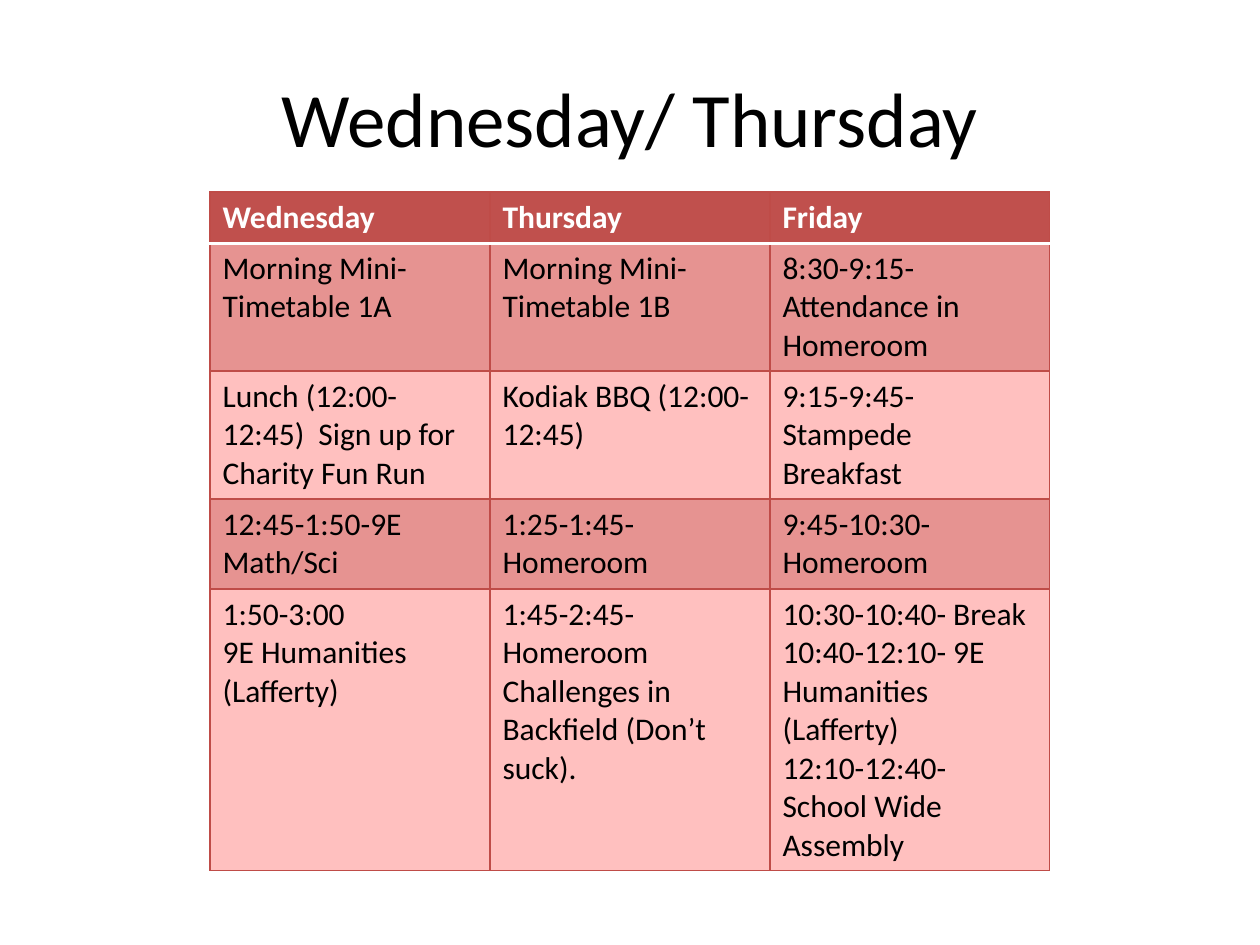
from dataclasses import dataclass

from lxml.etree import SubElement
from pptx import Presentation
from pptx.dml.color import RGBColor
from pptx.enum.text import MSO_ANCHOR as Anchor, PP_ALIGN as Align
from pptx.oxml.ns import qn
from pptx.util import Emu, Pt

EMU_PER_PX = 914400 / 126
FONT = "Calibri"
BLACK = RGBColor(0x00, 0x00, 0x00)
WHITE = RGBColor(0xFF, 0xFF, 0xFF)
HEADER_RED = RGBColor(0xC0, 0x50, 0x4D)
BORDER_RED = RGBColor(0xBF, 0x4C, 0x48)
DARK_PINK = RGBColor(0xE6, 0x93, 0x91)
LIGHT_PINK = RGBColor(0xFF, 0xC0, 0xBF)


@dataclass(frozen=True)
class Border:
    color: RGBColor
    width: float


@dataclass(frozen=True)
class RowStyle:
    fill: RGBColor
    color: RGBColor
    bold: bool
    top: Border
    bottom: Border


@dataclass(frozen=True)
class ScheduleRow:
    height: int
    style: RowStyle
    texts: tuple[str, ...]


THIN = Border(BORDER_RED, 0.75)
HEADER_RULE = Border(WHITE, 2)
HEADER = RowStyle(HEADER_RED, WHITE, True, THIN, HEADER_RULE)
FIRST = RowStyle(DARK_PINK, BLACK, False, HEADER_RULE, THIN)
DARK = RowStyle(DARK_PINK, BLACK, False, THIN, THIN)
LIGHT = RowStyle(LIGHT_PINK, BLACK, False, THIN, THIN)

SCHEDULE = (
    ScheduleRow(51, HEADER, ("Wednesday", "Thursday", "Friday")),
    ScheduleRow(128, FIRST, (
        "Morning Mini-Timetable 1A",
        "Morning Mini-Timetable 1B",
        "8:30-9:15- Attendance in Homeroom",
    )),
    ScheduleRow(128, LIGHT, (
        "Lunch (12:00-12:45)  Sign up for Charity Fun Run",
        "Kodiak BBQ (12:00-12:45)",
        "9:15-9:45- Stampede Breakfast",
    )),
    ScheduleRow(90, DARK, (
        "12:45-1:50-9E Math/Sci",
        "1:25-1:45- Homeroom",
        "9:45-10:30- Homeroom",
    )),
    ScheduleRow(281, LIGHT, (
        "1:50-3:00\n9E Humanities (Lafferty)",
        "1:45-2:45- Homeroom Challenges in Backfield (Don’t suck).",
        "10:30-10:40- Break\n10:40-12:10- 9E Humanities (Lafferty)\n"
        "12:10-12:40- School Wide Assembly",
    )),
)
COLUMN_WIDTH = 280


def px(length: int) -> Emu:
    return Emu(round(length * EMU_PER_PX))


def format_text(text_frame, size: int, color: RGBColor, bold: bool, align: Align) -> None:
    for paragraph in text_frame.paragraphs:
        paragraph.alignment = align
        for run in paragraph.runs:
            run.font.name = FONT
            run.font.size = Pt(size)
            run.font.bold = bold
            run.font.color.rgb = color


def add_border(properties, side: str, border: Border) -> None:
    line = SubElement(properties, qn(f"a:{side}"), w=str(Pt(border.width)))
    fill = SubElement(line, qn("a:solidFill"))
    SubElement(fill, qn("a:srgbClr"), val=str(border.color))


def fill_cell(cell, text: str, style: RowStyle) -> None:
    cell.text_frame.text = text
    format_text(cell.text_frame, 18, style.color, style.bold, Align.LEFT)
    properties = cell._tc.get_or_add_tcPr()
    borders = {"lnL": THIN, "lnR": THIN, "lnT": style.top, "lnB": style.bottom}
    for side, border in borders.items():
        add_border(properties, side, border)
    cell.fill.solid()
    cell.fill.fore_color.rgb = style.fill


def add_title(slide, text: str) -> None:
    title = slide.shapes.title
    title.left, title.top, title.width, title.height = map(px, (63, 38, 1134, 158))
    title.text_frame.text = text
    title.text_frame.vertical_anchor = Anchor.MIDDLE
    format_text(title.text_frame, 44, BLACK, False, Align.CENTER)


def add_schedule(slide, rows: tuple[ScheduleRow, ...]) -> None:
    columns = len(rows[0].texts)
    height = sum(row.height for row in rows)
    shape = slide.shapes.add_table(
        len(rows), columns, px(210), px(192), px(columns * COLUMN_WIDTH), px(height)
    )
    table = shape.table
    table.horz_banding = False
    for column in table.columns:
        column.width = px(COLUMN_WIDTH)
    for table_row, row in zip(table.rows, rows):
        table_row.height = px(row.height)
        for cell, text in zip(table_row.cells, row.texts):
            fill_cell(cell, text, row.style)


def main() -> None:
    presentation = Presentation()
    presentation.slide_width = px(1260)
    presentation.slide_height = px(945)
    slide = presentation.slides.add_slide(presentation.slide_layouts[5])
    add_title(slide, "Wednesday/ Thursday")
    add_schedule(slide, SCHEDULE)
    presentation.save("out.pptx")


if __name__ == "__main__":
    main()
